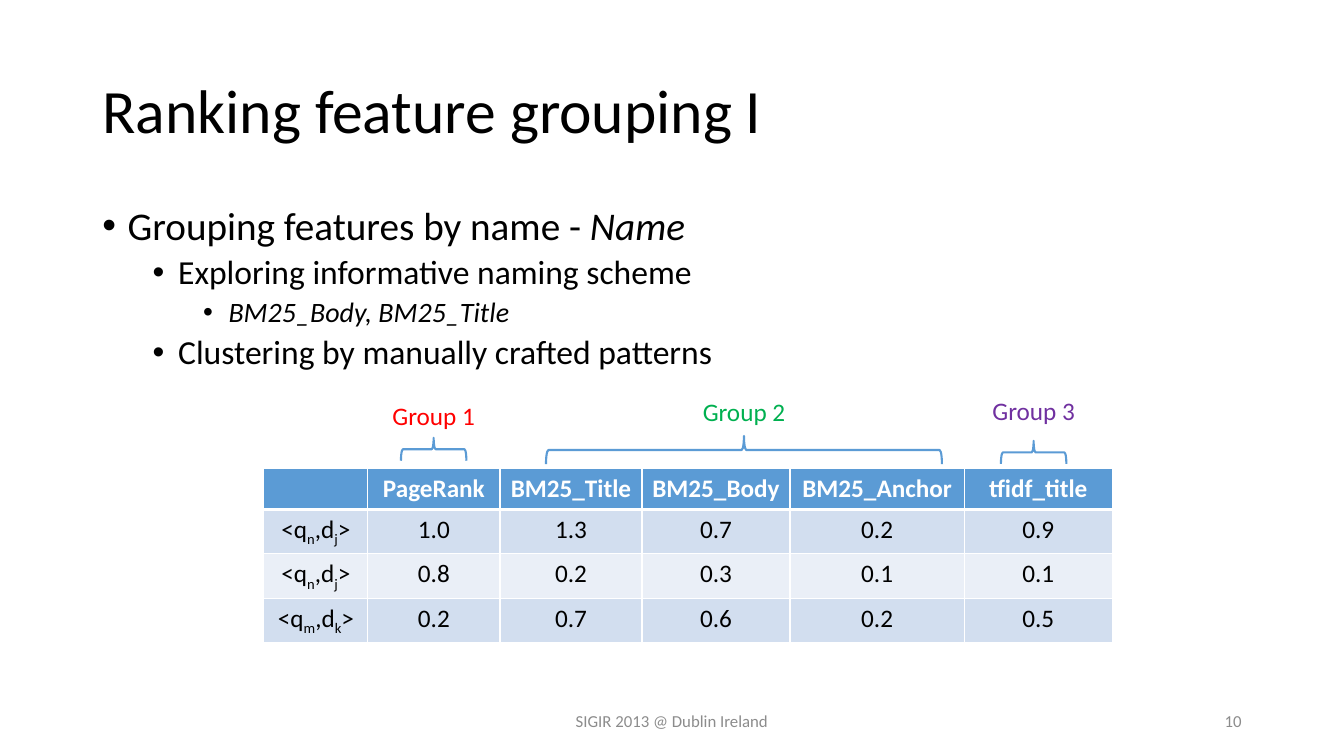
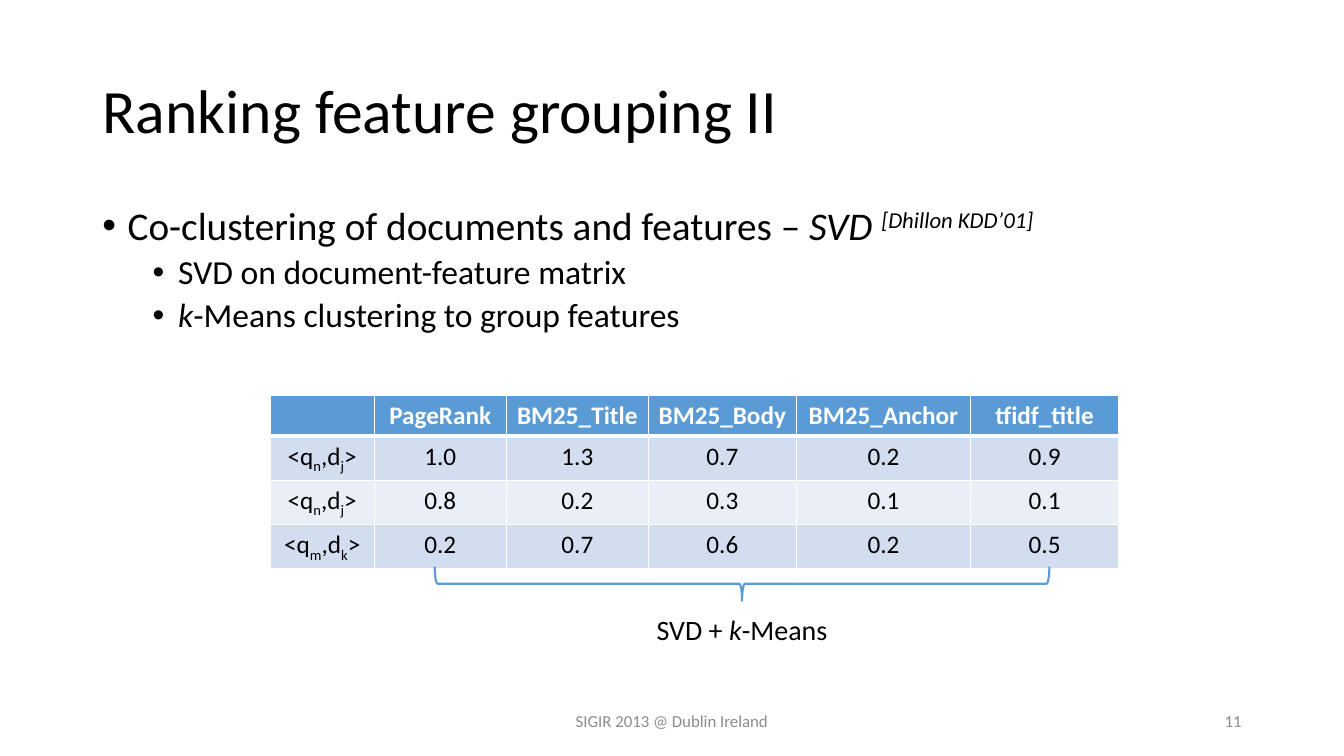
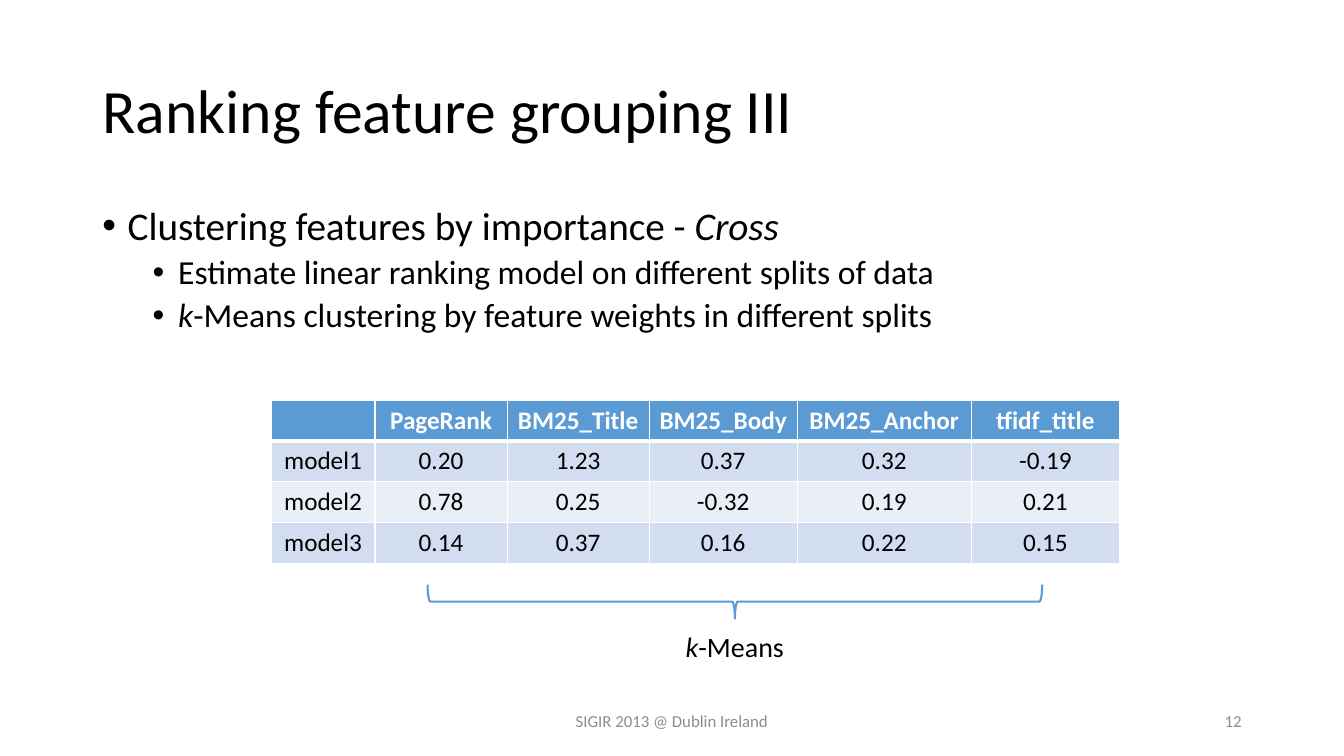
from dataclasses import dataclass

from lxml import etree
from pptx import Presentation
from pptx.dml.color import RGBColor
from pptx.enum.shapes import MSO_SHAPE
from pptx.enum.text import MSO_ANCHOR, MSO_AUTO_SIZE, PP_ALIGN
from pptx.oxml.ns import qn
from pptx.util import Cm, Pt

LEFT, CENTER, RIGHT = PP_ALIGN.LEFT, PP_ALIGN.CENTER, PP_ALIGN.RIGHT
TOP, MIDDLE = MSO_ANCHOR.TOP, MSO_ANCHOR.MIDDLE
NO_FIT = MSO_AUTO_SIZE.NONE
BRACE = MSO_SHAPE.RIGHT_BRACE
UP, DOWN = 270, 90
TITLE_ONLY = 5


@dataclass(frozen=True)
class Theme:
    font: str = "Calibri"
    # Colours
    ink: str = "000000"
    white: str = "FFFFFF"
    grey: str = "8C8C8C"
    blue: str = "5B9BD5"
    bands: tuple = ("D2DEEF", "EAEFF7")
    red: str = "FF0000"
    green: str = "00B050"
    purple: str = "7030A0"
    # Type sizes
    title: int = 44
    levels: tuple = (28, 24, 20)
    before: tuple = (10, 5, 5)
    note: int = 20
    cell: int = 18
    foot: int = 12


class Deck:
    """Holds the style and the current slide."""

    def __init__(self, theme):
        self.theme = theme
        self.prs = Presentation()
        self.prs.slide_width, self.prs.slide_height = Cm(33.87), Cm(19.05)
        self.shapes = None

    def slide(self, title, number):
        layout = self.prs.slide_layouts[TITLE_ONLY]
        self.shapes = self.prs.slides.add_slide(layout).shapes
        head = self.shapes.title
        head.left, head.top, head.width, head.height = map(Cm, (2.33, 1.01, 29.21, 3.68))
        self.frame(head, MIDDLE)
        para = head.text_frame.paragraphs[0]
        para.line_spacing = 0.9
        self.style(para, [title], self.theme.title, align=LEFT)
        # Footer
        for text, left, width, align in (
            ("SIGIR 2013 @ Dublin Ireland", 11.22, 11.43, CENTER),
            (str(number), 23.92, 7.62, RIGHT),
        ):
            self.text([text], left, 17.66, width, 1.01, self.theme.foot,
                      self.theme.grey, align, MIDDLE)

    def frame(self, shape, anchor):
        frame = shape.text_frame
        frame.word_wrap = True
        frame.auto_size = NO_FIT
        frame.vertical_anchor = anchor
        return frame

    def style(self, para, runs, size, color=None, align=LEFT, bold=False):
        """Runs are strings or (text, marks): i italic, ^ raised, v lowered."""
        para.alignment = align
        font = para.font
        font.name, font.size, font.bold = self.theme.font, Pt(size), bold
        font.color.rgb = RGBColor.from_string(color or self.theme.ink)
        for item in runs:
            text, marks = (item, "") if isinstance(item, str) else item
            run = para.add_run()
            run.text = text
            if "i" in marks:
                run.font.italic = True
            for mark, shift in (("^", "30000"), ("v", "-25000")):
                if mark in marks:
                    run._r.get_or_add_rPr().set("baseline", shift)

    def text(self, runs, left, top, width, height, size, color=None,
             align=CENTER, anchor=TOP, home=None):
        box = (home or self.shapes).add_textbox(*map(Cm, (left, top, width, height)))
        frame = self.frame(box, anchor)
        self.style(frame.paragraphs[0], runs, size, color, align)

    def bullets(self, items):
        box = self.shapes.add_textbox(*map(Cm, (2.33, 5.07, 29.21, 12.09)))
        frame = self.frame(box, TOP)
        for i, (level, *runs) in enumerate(items):
            para = frame.add_paragraph() if i else frame.paragraphs[0]
            para.level = level
            para.line_spacing = 0.9
            para.space_before = Pt(self.theme.before[level])
            props = para._p.get_or_add_pPr()
            props.set("marL", str(Cm(0.64 + 1.27 * level)))
            props.set("indent", str(-Cm(0.64)))
            etree.SubElement(props, qn("a:buFont")).set("typeface", "Arial")
            etree.SubElement(props, qn("a:buChar")).set("char", "•")
            self.style(para, runs, self.theme.levels[level])

    def edge(self, cell, side, width):
        line = etree.SubElement(cell._tc.get_or_add_tcPr(), qn("a:ln" + side))
        line.set("w", str(Pt(width)))
        fill = etree.SubElement(line, qn("a:solidFill"))
        etree.SubElement(fill, qn("a:srgbClr")).set("val", self.theme.white)

    def table(self, rows, left, top):
        look, widths, tall = self.theme, (2.62, 3.33, 3.58, 3.73, 4.39, 3.73), 1.03
        grid = self.shapes.add_table(
            len(rows), len(widths), Cm(left), Cm(top),
            Cm(sum(widths)), Cm(tall * len(rows))).table
        for col, width in zip(grid.columns, widths):
            col.width = Cm(width)
        for r, row in enumerate(rows):
            grid.rows[r].height = Cm(tall)
            head = r == 0
            fill = look.blue if head else look.bands[(r - 1) % 2]
            for c, runs in enumerate(row):
                cell = grid.cell(r, c)
                for side in "LRTB":
                    thick = (r, side) in ((0, "B"), (1, "T"))
                    self.edge(cell, side, 3 if thick else 1)
                cell.fill.solid()
                cell.fill.fore_color.rgb = RGBColor.from_string(fill)
                self.style(cell.text_frame.paragraphs[0],
                           [runs] if isinstance(runs, str) else runs,
                           look.cell, look.white if head else look.ink, CENTER, head)

    def brace(self, mid, level, span, depth, turn, runs, top, width, size, color=None):
        """A brace centred on (mid, level) with its label, as one group."""
        group = self.shapes.add_group_shape().shapes
        arm = group.add_shape(BRACE, Cm(mid - depth / 2), Cm(level - span / 2),
                              Cm(depth), Cm(span))
        arm.rotation = turn
        arm.shadow.inherit = False
        arm.fill.background()
        arm.line.color.rgb = RGBColor.from_string(self.theme.blue)
        arm.line.width = Pt(1.5)
        self.text(runs, mid - width / 2, top, width, 1.07, size, color, home=group)


def pair(query, doc):
    return ["<q", (query, "v"), ",d", (doc, "v"), ">"]


HEAD = ("", "PageRank", "BM25_Title", "BM25_Body", "BM25_Anchor", "tfidf_title")
SCORES = (
    HEAD,
    (pair("n", "j"), "1.0", "1.3", "0.7", "0.2", "0.9"),
    (pair("n", "j"), "0.8", "0.2", "0.3", "0.1", "0.1"),
    (pair("m", "k"), "0.2", "0.7", "0.6", "0.2", "0.5"),
)
WEIGHTS = (
    HEAD,
    ("model1", "0.20", "1.23", "0.37", "0.32", "-0.19"),
    ("model2", "0.78", "0.25", "-0.32", "0.19", "0.21"),
    ("model3", "0.14", "0.37", "0.16", "0.22", "0.15"),
)


def main():
    look = Theme()
    deck = Deck(look)

    # Grouping by name
    deck.slide("Ranking feature grouping I", 10)
    deck.bullets([
        (0, "Grouping features by name - ", ("Name", "i")),
        (1, "Exploring informative naming scheme"),
        (2, ("BM25_Body, BM25_Title", "i")),
        (1, "Clustering by manually crafted patterns"),
    ])
    deck.table(SCORES, 6.65, 11.81)
    for i, (mid, level, span, depth, top, color) in enumerate((
        (10.93, 11.32, 1.65, 0.58, 9.96, look.red),
        (18.75, 11.34, 9.98, 0.71, 9.86, look.green),
        (26.05, 11.4, 1.65, 0.58, 9.84, look.purple),
    ), 1):
        deck.brace(mid, level, span, depth, UP, [f"Group {i}"], top, 3.28,
                   look.cell, color)

    # Co-clustering
    deck.slide("Ranking feature grouping II", 11)
    deck.bullets([
        (0, "Co-clustering of documents and features – ", ("SVD ", "i"),
         ("[Dhillon KDD’01]", "i^")),
        (1, "SVD on document-feature matrix"),
        (1, ("k", "i"), "-Means clustering to group features"),
    ])
    deck.table(SCORES, 6.81, 9.96)
    deck.brace(18.7, 14.71, 15.49, 0.86, DOWN, ["SVD + ", ("k", "i"), "-Means"],
               15.32, 5.26, look.note)

    # Clustering by importance
    deck.slide("Ranking feature grouping III", 12)
    deck.bullets([
        (0, "Clustering features by importance - ", ("Cross", "i")),
        (1, "Estimate linear ranking model on different splits of data"),
        (1, ("k", "i"), "-Means clustering by feature weights in different splits"),
    ])
    deck.table(WEIGHTS, 6.83, 10.08)
    deck.brace(18.52, 15.16, 15.49, 0.86, DOWN, [("k", "i"), "-Means"],
               15.75, 5.26, look.note)

    deck.prs.save("out.pptx")


if __name__ == "__main__":
    main()
